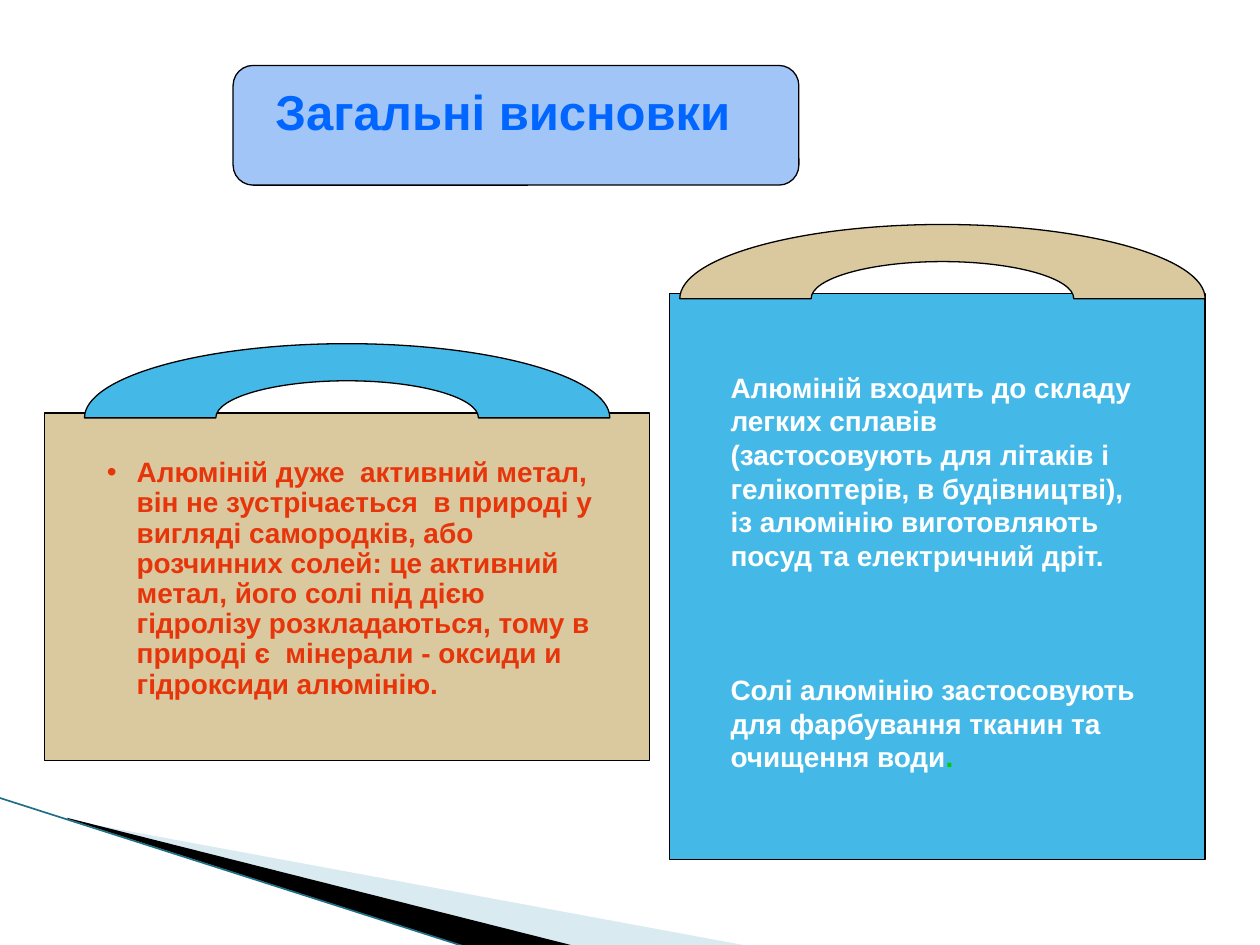
import pptx
import pptx.dml.color
import pptx.enum.shapes
import pptx.enum.text
import pptx.oxml
import pptx.oxml.ns
import pptx.util

Pt = pptx.util.Pt
Shapes = pptx.enum.shapes.MSO_SHAPE
qn = pptx.oxml.ns.qn

BLUE = "44B9E8"
SAND = "DAC99E"
BLACK = "000000"


def colour(value):
    return pptx.dml.color.RGBColor.from_string(value)


def add_element(parent, tag, **attributes):
    element = parent.makeelement(qn(tag), attributes)
    parent.append(element)
    return element


def bend(shape, curves):
    segments = list(shape._element.iter(qn("a:lnTo")))
    for start in curves:
        curve, *others = segments[start:start + 3]
        bezier = curve.makeelement(qn("a:cubicBezTo"), {})
        curve.addprevious(bezier)
        for segment in (curve, *others):
            bezier.append(segment[0])
            segment.getparent().remove(segment)


def reframe(shape, frame):
    left, top, width, height = map(Pt, frame)
    shift_x, shift_y = shape.left - left, shape.top - top
    for point in shape._element.iter(qn("a:pt")):
        point.set("x", str(int(point.get("x")) + shift_x))
        point.set("y", str(int(point.get("y")) + shift_y))
    for outline in shape._element.iter(qn("a:path")):
        outline.set("w", str(width))
        outline.set("h", str(height))
    shape.left, shape.top, shape.width, shape.height = left, top, width, height


class Painter:
    font = {"name": "Arial", "size": Pt(16), "bold": True}
    outline = Pt(0.75)

    def __init__(self, page):
        self.page = page

    def finish(self, shape, fill, line=None, alpha=None):
        shape.shadow.inherit = False
        shape.fill.solid()
        shape.fill.fore_color.rgb = colour(fill)
        if alpha:
            tint = shape.fill._xPr.find(qn("a:solidFill"))[0]
            add_element(tint, "a:alpha", val=str(alpha * 1000))
        if line:
            shape.line.color.rgb = colour(line)
            shape.line.width = self.outline
        else:
            shape.line.fill.background()

    def panel(self, kind, place, fill):
        shape = self.page.shapes.add_shape(kind, *map(Pt, place))
        self.finish(shape, fill, BLACK)

    def free(self, points, frame, close=False, curves=()):
        first, *rest = [(Pt(x), Pt(y)) for x, y in points]
        builder = self.page.shapes.build_freeform(*first, scale=1.0)
        builder.add_line_segments(rest, close=close)
        shape = builder.convert_to_shape()
        bend(shape, curves)
        reframe(shape, frame)
        return shape

    def wedge(self, points, frame, fill, alpha=None):
        self.finish(self.free(points, frame), fill, alpha=alpha)

    def handle(self, left, top, fill, radius_x=150.1, radius_y=42.4):
        bow = 0.55
        half = [(-1, 0), (-1, bow), (-bow, 1), (0, 1), (bow, 1), (1, bow), (1, 0)]
        unit = [(x / 2, y / 2) for x, y in half] + half[::-1]
        points = [(left + radius_x * (1 + x), top + radius_y * (1 - y)) for x, y in unit]
        frame = (left, top, 2 * radius_x, 2 * radius_y)
        self.finish(self.free(points, frame, True, (0, 3, 7, 10)), fill, BLACK)

    def line(self, start, end, tone, width):
        connector = self.page.shapes.add_connector(
            pptx.enum.shapes.MSO_CONNECTOR.STRAIGHT, *map(Pt, start + end))
        connector.line.color.rgb = colour(tone)
        connector.line.width = Pt(width)
        add_element(connector._element.spPr, "a:effectLst")

    def text(self, place, paragraphs, bullet=None, **spacing):
        box = self.page.shapes.add_textbox(*map(Pt, place))
        frame = box.text_frame
        frame.word_wrap = True
        frame.auto_size = pptx.enum.text.MSO_AUTO_SIZE.SHAPE_TO_FIT_TEXT
        for index, spans in enumerate(paragraphs):
            para = frame.add_paragraph() if index else frame.paragraphs[0]
            if bullet:
                properties = para._p.get_or_add_pPr()
                properties.set("marL", str(Pt(17)))
                properties.set("indent", str(-Pt(17)))
                add_element(properties, "a:buFont", typeface="Arial")
                add_element(properties, "a:buChar", char=bullet)
            for name, value in spacing.items():
                if index or name != "space_before":
                    setattr(para, name, value)
            for words, tone, changes in spans:
                span = para.add_run()
                span.text = words
                for name, value in {**self.font, **changes}.items():
                    setattr(span.font, name, value)
                span.font.color.rgb = colour(tone)


def main():
    deck = pptx.Presentation()
    deck.slide_width, deck.slide_height = Pt(720), Pt(540)
    painter = Painter(deck.slides.add_slide(deck.slide_layouts[6]))

    painter.wedge(
        [(39.6, 468.7), (428.4, 540.7), (328.3, 540.7), (39.6, 468)],
        (56.2, 393.8, 299.5, 113.8), "A0CBDC", alpha=40)
    painter.wedge(
        [(38.2, 467.3), (329, 540.7), (267.8, 541.4), (38.9, 468)],
        (-4.3, 455.8, 299.5, 66.2), BLACK)
    painter.line((-0.7, 455.8), (267.1, 541.4), "1F7085", 0.95)

    painter.panel(Shapes.ROUNDED_RECTANGLE, (133.2, 37.4, 323.3, 68.4), "A2C5F8")
    painter.panel(Shapes.RECTANGLE, (382.6, 167.8, 306, 323.3), BLUE)
    painter.panel(Shapes.RECTANGLE, (25.5, 236, 345.6, 198.5), SAND)

    painter.text(
        (54, 258.5, 306, 128.9),
        [[("Алюміній дуже  активний метал, він не зустрічається  в природі у "
           "вигляді самородків, або розчинних солей: це активний метал, його "
           "солі під дією гідролізу розкладаються, тому в природі є  мінерали "
           "- оксиди и гідроксиди алюмінію.", "E7350B", {})]],
        bullet="•", line_spacing=0.9)
    painter.text(
        (410.4, 208.1, 249.8, 238.3),
        [[("Алюміній входить до складу  легких сплавів (застосовують для "
           "літаків і гелікоптерів, в будівництві), із алюмінію виготовляють "
           "посуд та електричний дріт.", "FFFFFF", {})],
         [("Солі алюмінію застосовують для фарбування тканин та очищення води",
           "FFFFFF", {}),
          (".", "00CC00", {})]],
        space_before=Pt(57.5))
    painter.text(
        (150.3, 43.2, 368.6, 41),
        [[("Загальні висновки", "0066FF", {"size": Pt(28)})]])

    painter.handle(48.3, 196.4, BLUE)
    painter.handle(388.5, 128.3, SAND)
    deck.save("out.pptx")


if __name__ == "__main__":
    main()
